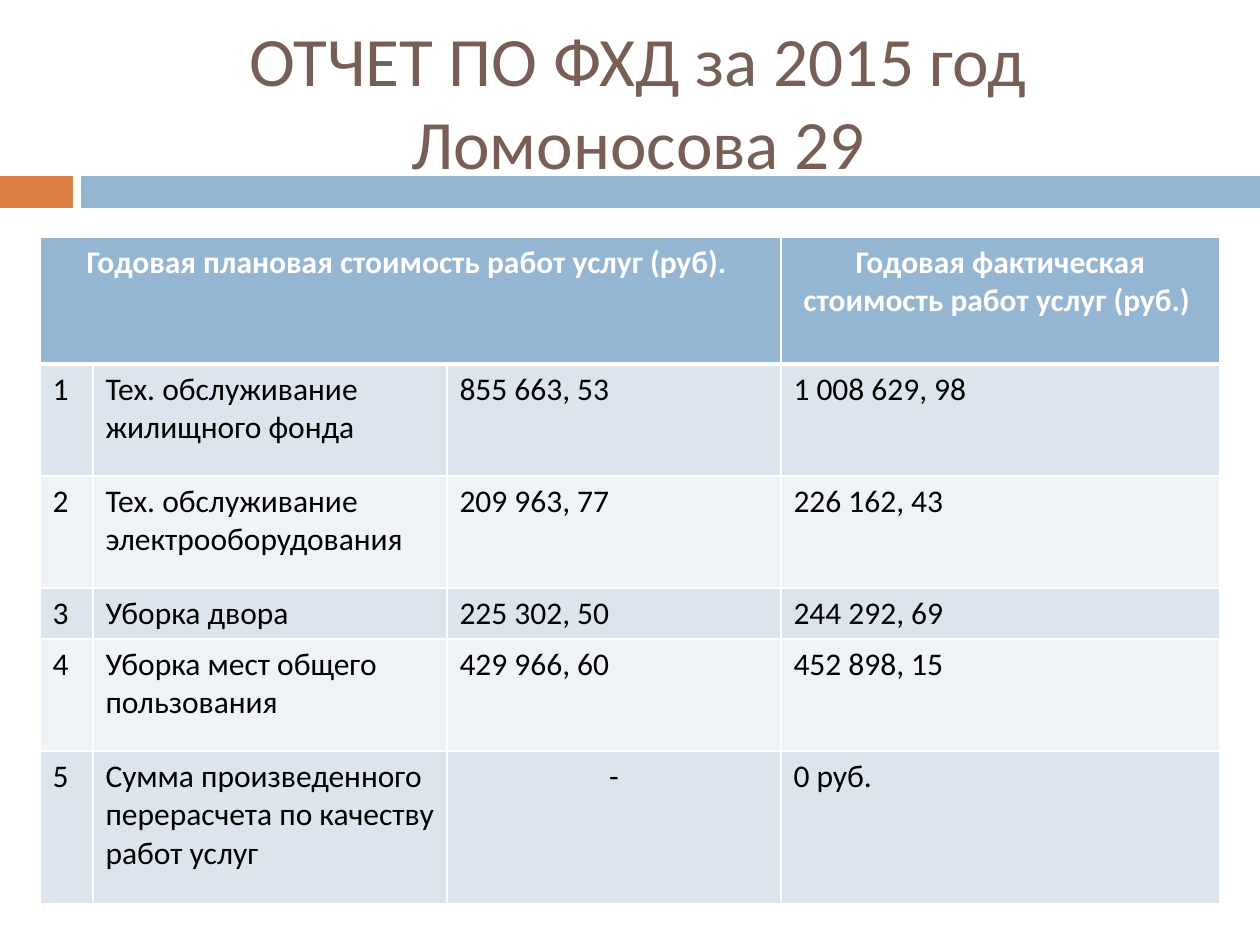
from lxml.etree import SubElement
from pptx import Presentation
from pptx.dml.color import RGBColor
from pptx.enum.shapes import MSO_SHAPE as Shape
from pptx.enum.text import MSO_ANCHOR as Anchor, MSO_AUTO_SIZE as AutoSize, PP_ALIGN as Align
from pptx.oxml.ns import qn
from pptx.util import Pt

PX = 914400 // 126
FONT = "Calibri"
BLUE, ORANGE, BROWN = "94B6D2", "DD8047", "775F55"
WHITE, BLACK = "FFFFFF", "000000"
BANDS = ("DCE5EE", "EEF3F7")
COLS = (53, 354, 334, 439)
ROWS = (127, 112, 112, 51, 112, 153)
HEADER = ("Годовая плановая стоимость работ услуг (руб). ", "", "",
          "Годовая фактическая стоимость работ услуг (руб.) ")
WORKS = (
    ("1", "Тех. обслуживание жилищного фонда", "855 663, 53", "1 008 629, 98"),
    ("2", "Тех. обслуживание электрооборудования", "209 963, 77", "226 162, 43"),
    ("3", "Уборка двора", "225 302, 50", "244 292, 69"),
    ("4", "Уборка мест общего пользования", "429 966, 60", "452 898, 15"),
    ("5", "Сумма произведенного перерасчета по качеству работ услуг", "-", "0 руб."),
)


def paint(color_format, color):
    """Set a fill or font colour from a hex string."""
    color_format.rgb = RGBColor.from_string(color)


def fill(obj, color):
    """Give a shape or cell a solid fill."""
    obj.fill.solid()
    paint(obj.fill.fore_color, color)


def style(p, size, color, bold=False, align=Align.LEFT):
    """Format a paragraph and its runs."""
    p.alignment = align
    for r in p.runs:
        r.font.name, r.font.size, r.font.bold = FONT, Pt(size), bold
        paint(r.font.color, color)


def border(cell, bottom):
    """Draw white borders around a cell, with the given bottom width."""
    tcPr = cell._tc.get_or_add_tcPr()
    for i, side in enumerate(("lnL", "lnR", "lnT", "lnB")):
        ln = SubElement(tcPr, qn(f"a:{side}"), w=str(Pt(bottom if side == "lnB" else 1)))
        SubElement(SubElement(ln, qn("a:solidFill")), qn("a:srgbClr"), val=WHITE)
        tcPr.remove(ln)
        tcPr.insert(i, ln)


def add_title(s, x, y, w, h):
    """Place the centred two-line title."""
    sp = s.shapes.title
    sp.left, sp.top, sp.width, sp.height = (v * PX for v in (x, y, w, h))
    tf = sp.text_frame
    tf.text = "ОТЧЕТ ПО ФХД за 2015 год \vЛомоносова 29 "
    tf.auto_size, tf.word_wrap = AutoSize.NONE, True
    tf.vertical_anchor = Anchor.MIDDLE
    style(tf.paragraphs[0], 39.6, BROWN, align=Align.CENTER)


def add_stripe(s, x, y, w, h, accent=73, gap=8):
    """Draw the stripe with its accent block at the left."""
    rest = accent + gap
    for left, width, color in ((x, accent, ORANGE), (x + rest, w - rest, BLUE)):
        sp = s.shapes.add_shape(Shape.RECTANGLE, left * PX, y * PX, width * PX, h * PX)
        sp.shadow.inherit = False
        sp.line.fill.background()
        fill(sp, color)


def add_costs(s, x, y):
    """Place the table of planned and actual costs."""
    table = s.shapes.add_table(len(ROWS), len(COLS), x * PX, y * PX,
                               sum(COLS) * PX, sum(ROWS) * PX).table
    for col, width in zip(table.columns, COLS):
        col.width = width * PX
    for row, height in zip(table.rows, ROWS):
        row.height = height * PX
    for i, texts in enumerate((HEADER, *WORKS)):
        head = i == 0
        for j, text in enumerate(texts):
            cell = table.cell(i, j)
            cell.text = text
            fill(cell, BLUE if head else BANDS[(i - 1) % 2])
            border(cell, 3 if head else 1)
            style(cell.text_frame.paragraphs[0], 18, WHITE if head else BLACK, head,
                  Align.CENTER if head or text == "-" else Align.LEFT)
    table.cell(0, 0).merge(table.cell(0, 2))


def main():
    """Build and save the slide."""
    prs = Presentation()
    prs.slide_width, prs.slide_height = 1260 * PX, 945 * PX
    s = prs.slides.add_slide(prs.slide_layouts[5])
    add_stripe(s, 0, 176, 1260, 32)
    add_title(s, 84, 32, 1124, 136)
    add_costs(s, 40, 237)
    prs.save("out.pptx")


if __name__ == "__main__":
    main()
